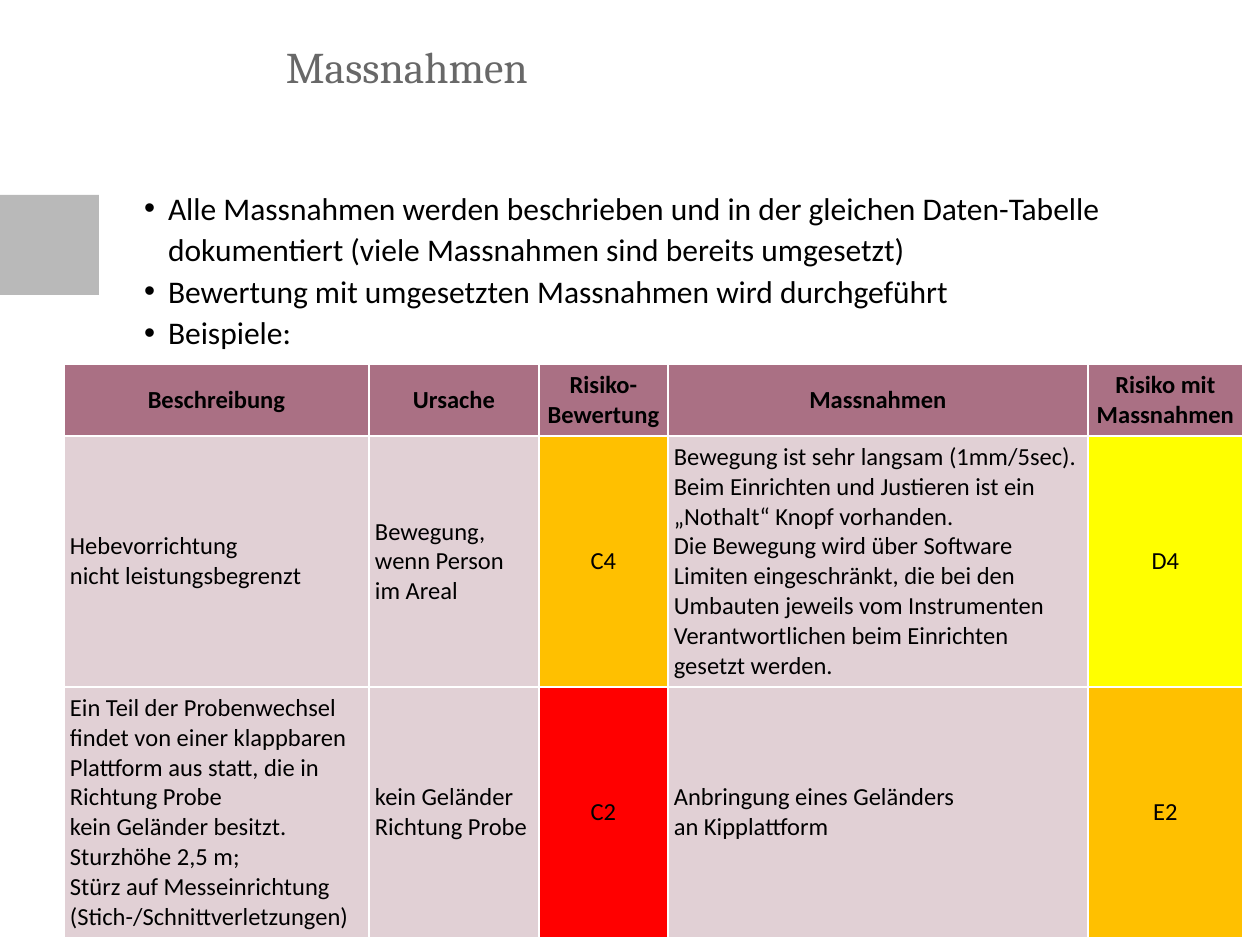
"""Build the slide on measures with its risk table."""
from lxml.etree import SubElement
from pptx import Presentation
from pptx.dml.color import RGBColor
from pptx.enum.shapes import MSO_SHAPE
from pptx.enum.text import MSO_ANCHOR, MSO_AUTO_SIZE, PP_ALIGN
from pptx.oxml import parse_xml
from pptx.oxml.ns import nsdecls, qn
from pptx.util import Emu, Pt

COLORS = {
    "text": "000000",
    "title": "686868",
    "accent": "B9B9B9",
    "border": "FFFFFF",
    "header": "AA7084",
    "body": "E1D0D5",
    "orange": "FFC000",
    "yellow": "FFFF00",
    "red": "FF0000",
}
RISK_COLORS = {"C4": "orange", "D4": "yellow", "C2": "red", "E2": "orange"}
EMU_PER_PX = 914400 / 126

POINTS = [
    "Alle Massnahmen werden beschrieben und in der gleichen Daten-Tabelle "
    "dokumentiert (viele Massnahmen sind bereits umgesetzt)",
    "Bewertung mit umgesetzten Massnahmen wird durchgeführt",
    "Beispiele:",
]
COLUMN_WIDTHS = [305, 170, 129, 420, 155]
ROW_HEIGHTS = [72, 251, 251]
RISK_ROWS = [
    ["Beschreibung", "Ursache", "Risiko-\nBewertung", "Massnahmen",
     "Risiko mit\nMassnahmen"],
    ["Hebevorrichtung\nnicht leistungsbegrenzt",
     "Bewegung,\nwenn Person\nim Areal",
     "C4",
     "Bewegung ist sehr langsam (1mm/5sec).\n"
     "Beim Einrichten und Justieren ist ein\n"
     "„Nothalt“ Knopf vorhanden.\n"
     "Die Bewegung wird über Software Limiten eingeschränkt, die bei den "
     "Umbauten jeweils vom Instrumenten\n"
     "Verantwortlichen beim Einrichten\n"
     "gesetzt werden.",
     "D4"],
    ["Ein Teil der Probenwechsel\nfindet von einer klappbaren\n"
     "Plattform aus statt, die in\nRichtung Probe\n"
     "kein Geländer besitzt.\nSturzhöhe 2,5 m;\n"
     "Stürz auf Messeinrichtung\n(Stich-/Schnittverletzungen)",
     "kein Geländer\nRichtung Probe",
     "C2",
     "Anbringung eines Geländers\nan Kipplattform",
     "E2"],
]


def px(length):
    """Turn pixels into EMU."""
    return Emu(round(length * EMU_PER_PX))


def rgb(name):
    """Look up a named colour."""
    return RGBColor.from_string(COLORS[name])


class SlideBuilder:
    """Hold the style and the current slide."""

    def __init__(self, slide, font="Calibri", title_font="Cambria"):
        """Keep the slide and its fonts."""
        self.slide = slide
        self.font = font
        self.title_font = title_font

    def add_text(self, paragraph, text, size, color="text", font=None,
                 bold=False):
        """Add each line of the text as a run."""
        for index, line in enumerate(text.split("\n")):
            if index:
                paragraph.add_line_break()
            run = paragraph.add_run()
            run.text = line
            run.font.name = font or self.font
            run.font.size = Pt(size)
            run.font.bold = bold
            run.font.color.rgb = rgb(color)

    def prepare(self, frame):
        """Give a text frame no insets and wrapped text from the top."""
        frame.margin_left = frame.margin_right = 0
        frame.margin_top = frame.margin_bottom = 0
        frame.word_wrap = True
        frame.auto_size = MSO_AUTO_SIZE.NONE
        frame.vertical_anchor = MSO_ANCHOR.TOP

    def title(self, text, left, top, width, height):
        """Place and fill the title placeholder."""
        heading = self.slide.shapes.title
        heading.left, heading.top = px(left), px(top)
        heading.width, heading.height = px(width), px(height)
        self.prepare(heading.text_frame)
        paragraph = heading.text_frame.paragraphs[0]
        paragraph.alignment = PP_ALIGN.LEFT
        self.add_text(paragraph, text, 25, "title", self.title_font)

    def block(self, color, left, top, width, height):
        """Add a plain filled rectangle."""
        block = self.slide.shapes.add_shape(
            MSO_SHAPE.RECTANGLE, px(left), px(top), px(width), px(height))
        block.shadow.inherit = False
        block.fill.solid()
        block.fill.fore_color.rgb = rgb(color)
        block.line.fill.background()

    def bullets(self, points, left, top, width, height, indent=24):
        """Add a bulleted list."""
        frame = self.slide.shapes.add_textbox(
            px(left), px(top), px(width), px(height)).text_frame
        self.prepare(frame)
        for index, point in enumerate(points):
            paragraph = frame.add_paragraph() if index else frame.paragraphs[0]
            paragraph.line_spacing = 1.1
            properties = paragraph._p.get_or_add_pPr()
            properties.set("marL", str(px(indent)))
            properties.set("indent", str(-px(indent)))
            SubElement(properties, qn("a:buFont"), typeface="Arial")
            SubElement(properties, qn("a:buChar"), char="•")
            self.add_text(paragraph, point, 18)

    def cell(self, cell, text, color, bold, centred):
        """Fill, border and label one table cell."""
        cell.fill.solid()
        cell.fill.fore_color.rgb = rgb(color)
        cell.margin_left = cell.margin_right = px(6)
        cell.margin_top = cell.margin_bottom = px(6)
        cell.vertical_anchor = MSO_ANCHOR.MIDDLE
        properties = cell._tc.get_or_add_tcPr()
        for index, side in enumerate(("lnL", "lnR", "lnT", "lnB")):
            properties.insert(index, parse_xml(
                f'<a:{side} {nsdecls("a")} w="{Pt(1)}"><a:solidFill>'
                f'<a:srgbClr val="{COLORS["border"]}"/>'
                f'</a:solidFill></a:{side}>'))
        paragraph = cell.text_frame.paragraphs[0]
        paragraph.alignment = PP_ALIGN.CENTER if centred else PP_ALIGN.LEFT
        self.add_text(paragraph, text, 14, bold=bold)

    def table(self, rows, left, top, widths, heights):
        """Add the risk table with coloured ratings."""
        table = self.slide.shapes.add_table(
            len(rows), len(widths), px(left), px(top),
            px(sum(widths)), px(sum(heights))).table
        for column, width in zip(table.columns, widths):
            column.width = px(width)
        for index, (row, height) in enumerate(zip(rows, heights)):
            table.rows[index].height = px(height)
            header = index == 0
            for column, text in enumerate(row):
                color = "header" if header else RISK_COLORS.get(text, "body")
                self.cell(table.cell(index, column), text, color,
                          header, header or text in RISK_COLORS)


def main():
    """Compose and save the slide."""
    deck = Presentation()
    deck.slide_width, deck.slide_height = px(1260), px(945)
    builder = SlideBuilder(deck.slides.add_slide(deck.slide_layouts[5]))
    builder.block("accent", 0, 195, 99, 100)
    builder.bullets(POINTS, 144, 185, 1067, 645)
    builder.title("Massnahmen", 286, 40, 925, 71)
    builder.table(RISK_ROWS, 64, 364, COLUMN_WIDTHS, ROW_HEIGHTS)
    deck.save("out.pptx")


if __name__ == "__main__":
    main()
